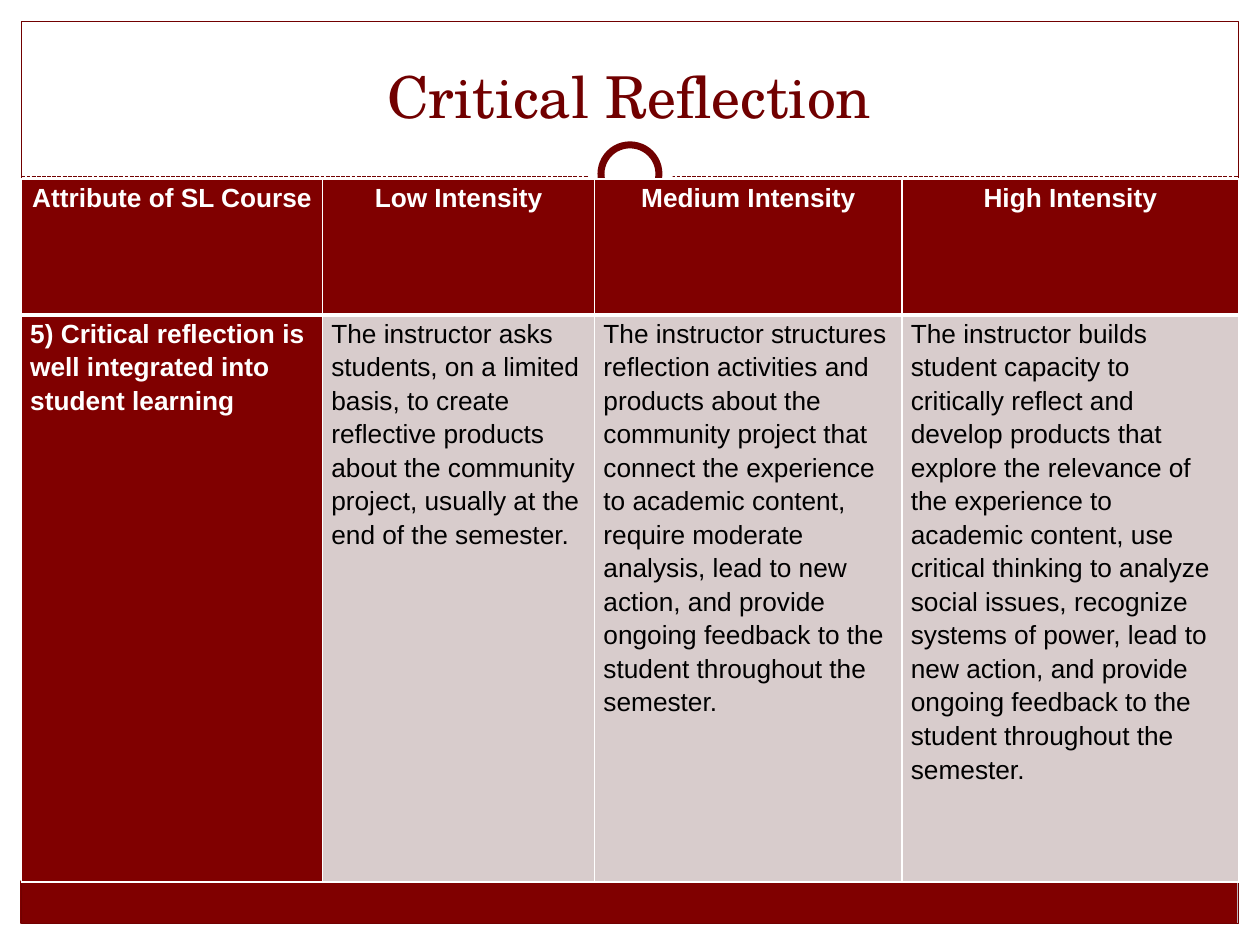
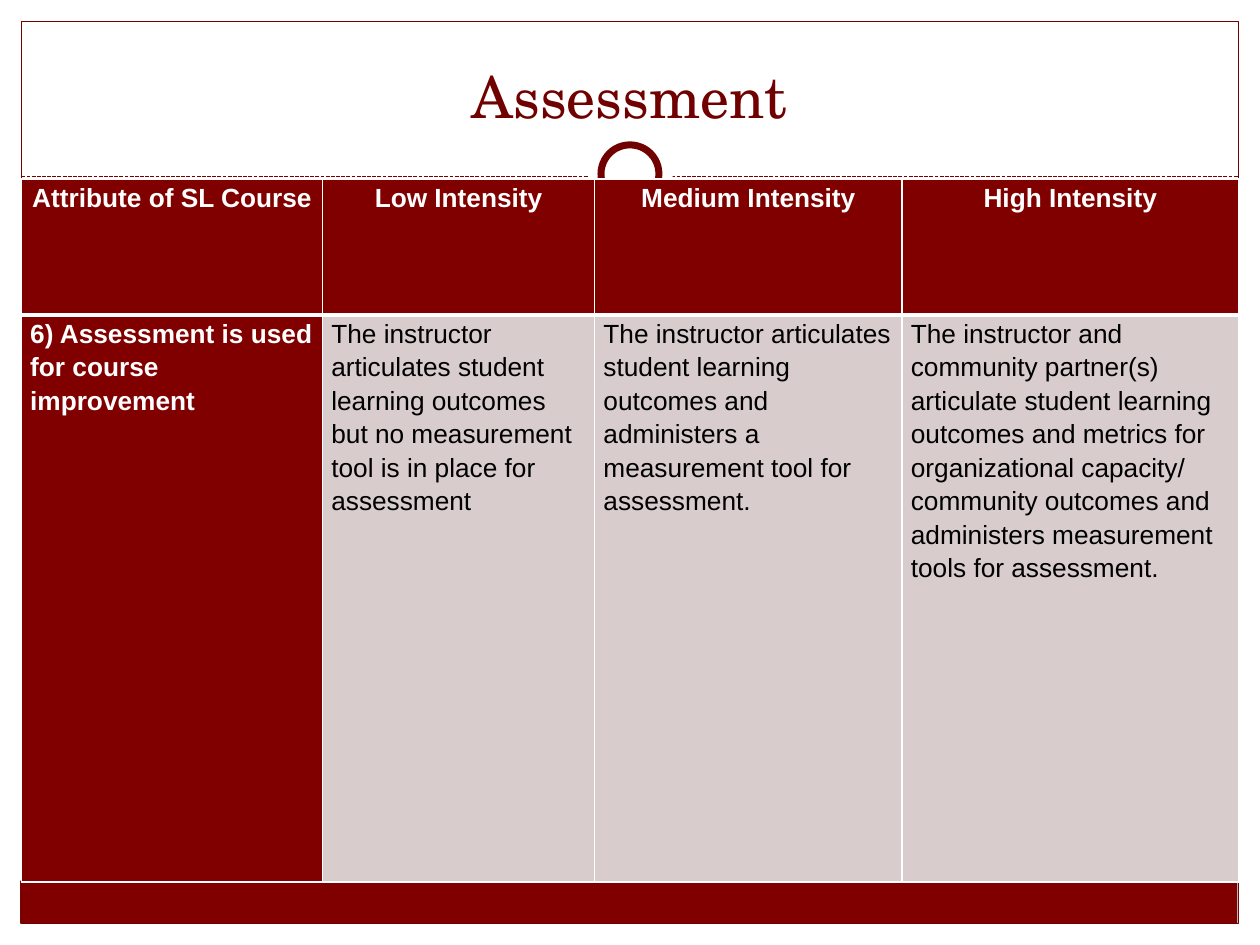
from lxml import etree
from pptx import Presentation
from pptx.dml.color import RGBColor
from pptx.enum.dml import MSO_LINE
from pptx.enum.shapes import MSO_CONNECTOR, MSO_SHAPE
from pptx.enum.text import MSO_ANCHOR as Anchor, MSO_AUTO_SIZE, PP_ALIGN as Align
from pptx.oxml.ns import qn
from pptx.util import Inches, Pt

WHITE, BLACK = "FFFFFF", "000000"
MAROON, DARK_RED = "800000", "710000"
PALE_ROSE, BACKGROUND = "D8CCCC", "C5D1D7"

TITLE_FORMAT = {"name": "TeX Gyre Schola", "size": Pt(33), "bold": False}
HEADING_FORMAT = {"name": "Arial", "size": Pt(15), "bold": True}
BODY_FORMAT = {**HEADING_FORMAT, "bold": False}

COLUMN_WIDTHS = [2.39, 2.16, 2.44, 2.67]
ROW_HEIGHTS = [1.08, 4.5]
HEADINGS = ["Attribute of SL Course", "Low Intensity", "Medium Intensity", "High Intensity"]

RUBRICS = {
    "Critical Reflection": [
        "5) Critical reflection is well integrated into student learning",
        "The instructor asks students, on a limited basis, to create reflective products "
        "about the community project, usually at the end of the semester.",
        "The instructor structures reflection activities and products about the community "
        "project that connect the experience to academic content, require moderate analysis, "
        "lead to new action, and provide ongoing feedback to the student throughout the semester.",
        "The instructor builds student capacity to critically reflect and develop products that "
        "explore the relevance of the experience to academic content, use critical thinking to "
        "analyze social issues, recognize systems of power, lead to new action, and provide "
        "ongoing feedback to the student throughout the semester.",
    ],
    "Assessment": [
        "6) Assessment is used for course improvement",
        "The instructor articulates student learning outcomes but no measurement tool is in "
        "place for assessment",
        "The instructor articulates student learning outcomes and administers a measurement "
        "tool for assessment.",
        "The instructor and community partner(s) articulate student learning outcomes and "
        "metrics for organizational capacity/ community outcomes and administers measurement "
        "tools for assessment.",
    ],
}


def rgb(value):
    return RGBColor.from_string(value)


def apply_format(target, values):
    for name, value in values.items():
        setattr(target, name, value)


class Deck:
    def __init__(self):
        self.presentation = Presentation()
        self.presentation.slide_width = Inches(10)
        self.presentation.slide_height = Inches(7.5)
        self.slide = None

    def add_slide(self, title):
        self.slide = self.presentation.slides.add_slide(self.presentation.slide_layouts[5])
        fill = self.slide.background.fill
        fill.solid()
        fill.fore_color.rgb = rgb(BACKGROUND)
        self.add_decoration()
        self.add_title(title)

    def add_decoration(self):
        for box in [(0, 7.33, 10, 0.17), (0, 0, 10, 1.52), (0, 0, 0.17, 7.5), (9.83, 0, 0.17, 7.5)]:
            self.add_shape(MSO_SHAPE.RECTANGLE, box, fill=WHITE)
        self.add_shape(MSO_SHAPE.RECTANGLE, (0.16, 6.99, 9.66, 0.34), fill=MAROON)
        self.add_shape(MSO_SHAPE.RECTANGLE, (0.17, 0.17, 9.66, 7.16), line=DARK_RED)
        self.add_dashed_line(0.17, 9.83, 1.4)
        self.add_shape(MSO_SHAPE.OVAL, (4.67, 1.05, 0.67, 0.67), fill=WHITE)
        self.add_shape(MSO_SHAPE.OVAL, (4.77, 1.15, 0.46, 0.46), fill=WHITE, line=DARK_RED, width=4)

    def add_shape(self, kind, box, fill=None, line=None, width=0.75):
        shape = self.slide.shapes.add_shape(kind, *map(Inches, box))
        shape.shadow.inherit = False
        if fill:
            shape.fill.solid()
            shape.fill.fore_color.rgb = rgb(fill)
        else:
            shape.fill.background()
        if line:
            shape.line.color.rgb = rgb(line)
            shape.line.width = Pt(width)
        else:
            shape.line.fill.background()

    def add_dashed_line(self, left, right, top):
        ends = map(Inches, (left, top, right, top))
        connector = self.slide.shapes.add_connector(MSO_CONNECTOR.STRAIGHT, *ends)
        connector.line.color.rgb = rgb(DARK_RED)
        connector.line.width = Pt(0.75)
        connector.line.dash_style = MSO_LINE.SQUARE_DOT
        properties = connector.element.find(qn("p:spPr"))
        etree.SubElement(properties, qn("a:effectLst"))

    def add_title(self, text):
        title = self.slide.shapes.title
        self.slide.shapes.element.append(title.element)
        apply_format(title, {"left": Inches(0.33), "top": Inches(0.25),
                             "width": Inches(9.33), "height": Inches(0.83)})
        apply_format(title.text_frame, {"word_wrap": True, "auto_size": MSO_AUTO_SIZE.NONE,
                                        "vertical_anchor": Anchor.BOTTOM})
        self.add_text(title.text_frame, text, TITLE_FORMAT, DARK_RED, {"alignment": Align.CENTER})

    def add_text(self, frame, text, font_format, color, paragraph_format):
        paragraph = frame.paragraphs[0]
        apply_format(paragraph, paragraph_format)
        run = paragraph.add_run()
        run.text = text
        apply_format(run.font, font_format)
        run.font.color.rgb = rgb(color)

    def add_table(self, rows):
        box = (0.17, 1.42, sum(COLUMN_WIDTHS), sum(ROW_HEIGHTS))
        table = self.slide.shapes.add_table(
            len(rows), len(HEADINGS), *map(Inches, box)).table
        table.horz_banding = False
        for column, width in zip(table.columns, COLUMN_WIDTHS):
            column.width = Inches(width)
        for row, height in zip(table.rows, ROW_HEIGHTS):
            row.height = Inches(height)
        for row_index, texts in enumerate(rows):
            for column_index, text in enumerate(texts):
                self.fill_cell(table.cell(row_index, column_index), text,
                               row_index == 0, column_index == 0)

    def fill_cell(self, cell, text, in_header, in_first_column):
        emphasized = in_header or in_first_column
        apply_format(cell, {"margin_left": Inches(0.07), "margin_right": Inches(0.07),
                            "margin_top": 0, "margin_bottom": 0, "vertical_anchor": Anchor.TOP})
        cell.fill.solid()
        cell.fill.fore_color.rgb = rgb(MAROON if emphasized else PALE_ROSE)
        self.add_text(cell.text_frame, text,
                      HEADING_FORMAT if emphasized else BODY_FORMAT,
                      WHITE if emphasized else BLACK,
                      {"alignment": Align.CENTER if in_header else Align.LEFT,
                       "line_spacing": 1.15})
        thick_side = "lnB" if in_header else "lnT"
        properties = cell._tc.get_or_add_tcPr()
        for index, side in enumerate(["lnL", "lnR", "lnT", "lnB"]):
            width = Pt(3 if side == thick_side else 1)
            border = etree.Element(qn(f"a:{side}"), w=str(width))
            fill = etree.SubElement(border, qn("a:solidFill"))
            etree.SubElement(fill, qn("a:srgbClr"), val=WHITE)
            properties.insert(index, border)


def main():
    deck = Deck()
    for title, criteria in RUBRICS.items():
        deck.add_slide(title)
        deck.add_table([HEADINGS, criteria])
    deck.presentation.save("out.pptx")


if __name__ == "__main__":
    main()
